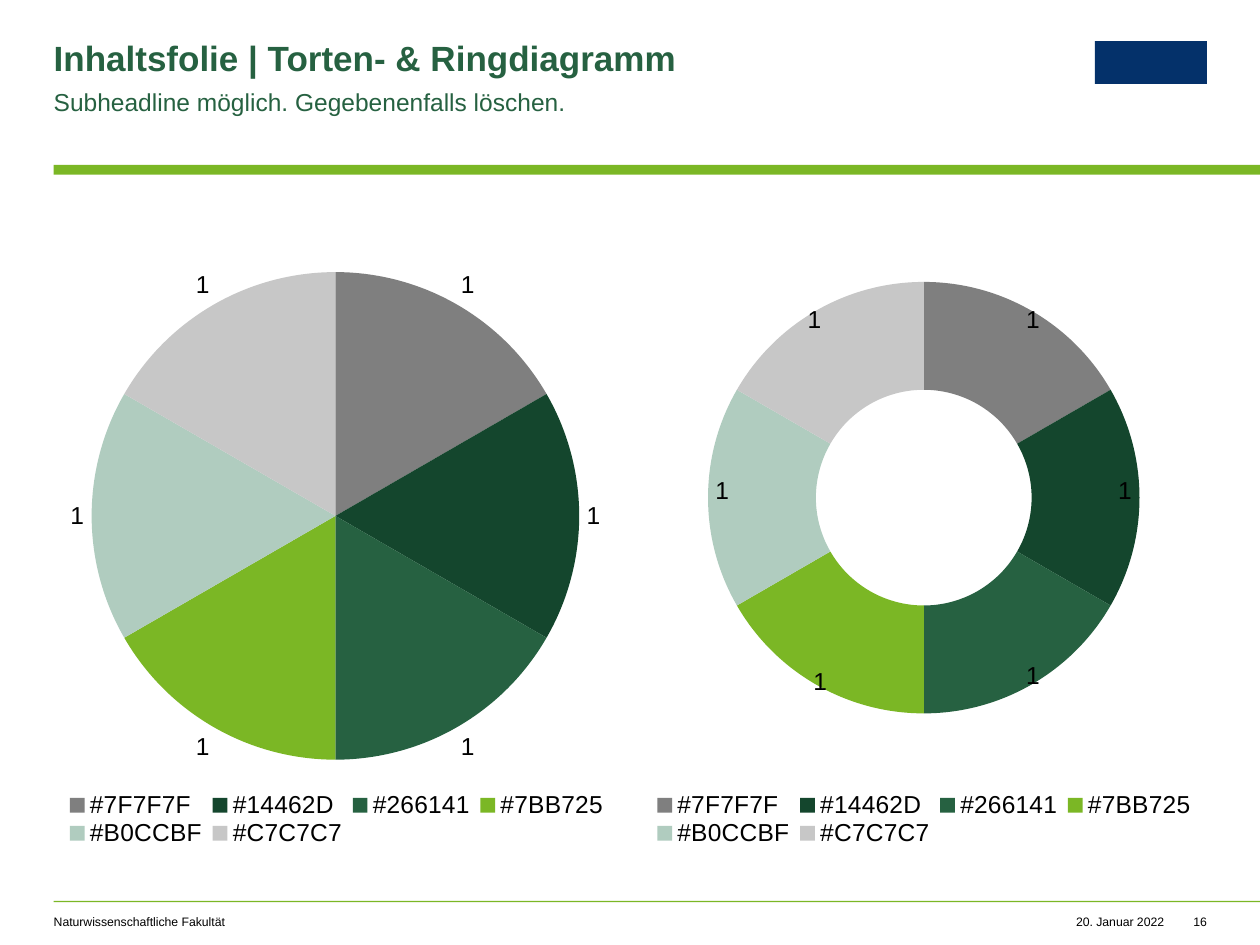
from lxml import etree
from pptx import Presentation
from pptx.chart.data import CategoryChartData
from pptx.dml.color import RGBColor
from pptx.enum.chart import XL_CHART_TYPE as CT, XL_LABEL_POSITION as LP
from pptx.enum.chart import XL_LEGEND_POSITION as LEGEND
from pptx.enum.shapes import MSO_SHAPE
from pptx.enum.text import PP_ALIGN as AL
from pptx.oxml.ns import qn
from pptx.util import Pt

COLORS = {"green": "7BB725", "dark": "266141", "navy": "04316A", "text": "000000"}
SLICES = ["7F7F7F", "14462D", "266141", "7BB725", "B0CCBF", "C7C7C7"]
FONT = "Arial"
WIDTH, HEIGHT = 720, 540
LEFT, RIGHT = 30.7, 689.7
# Label shifts that move the ring's values towards its outer edge
RING_SHIFTS = [(0.05, -0.06), (0.07, -0.01), (0.05, 0.06),
               (-0.04, 0.07), (-0.07, -0.01), (-0.05, -0.06)]
# Manual layouts, as shares of the chart
EDGE = {"xMode": "edge", "yMode": "edge"}
PIE_PLOT = {"x": 0.067, "y": 0.076, "w": 0.862, "h": 0.775}
RING_PLOT = {"x": 0.118, "y": 0.092, "w": 0.763, "h": 0.685}
LEGEND_BOX = {"x": 0.01, "y": 0.9, "w": 0.98, "h": 0.09}


def set_font(font, size, color="text", bold=False):
    font.name, font.size, font.bold = FONT, Pt(size), bold
    font.color.rgb = RGBColor.from_string(COLORS[color])


def add_rect(slide, x, y, w, h, color):
    sp = slide.shapes.add_shape(MSO_SHAPE.RECTANGLE, Pt(x), Pt(y), Pt(w), Pt(h))
    sp.shadow.inherit = False
    sp.fill.solid()
    sp.fill.fore_color.rgb = RGBColor.from_string(COLORS[color])
    sp.line.fill.background()


def add_text(slide, x, y, w, h, text, size, color="text", bold=False,
             align=AL.LEFT, spacing=1.0, wrap=True):
    tf = slide.shapes.add_textbox(Pt(x), Pt(y), Pt(w), Pt(h)).text_frame
    tf.margin_left = tf.margin_right = tf.margin_top = tf.margin_bottom = 0
    tf.word_wrap = wrap
    p = tf.paragraphs[0]
    p.text, p.alignment, p.line_spacing = text, align, spacing
    set_font(p.font, size, color, bold)


def add_layout(parent, index, values):
    """Give a chart part a manual layout."""
    for old in parent.findall(qn("c:layout")):
        parent.remove(old)
    layout = etree.Element(qn("c:layout"))
    manual = etree.SubElement(layout, qn("c:manualLayout"))
    for name, value in values.items():
        etree.SubElement(manual, qn(f"c:{name}")).set("val", str(value))
    parent.insert(index, layout)


def add_header(slide, x, y, right):
    add_text(slide, x, y, 404, 21.6, "Inhaltsfolie | Torten- & Ringdiagramm",
             20, "dark", bold=True, spacing=0.9)
    add_text(slide, x, y + 24.4, 404, 17, "Subheadline möglich. Gegebenenfalls löschen.",
             14, "dark", spacing=1.1)
    add_rect(slide, right - 64, y, 64, 24.5, "navy")  # logo placeholder
    add_rect(slide, x, y + 70.8, WIDTH - x, 5.5, "green")


def add_footer(slide, x, y, right):
    add_rect(slide, x, y, WIDTH - x, 0.8, "green")
    top = y + 7.7
    add_text(slide, x, top, 323, 8.6, "Naturwissenschaftliche Fakultät", 7)
    for text, end, w in [("20. Januar 2022", right - 24.5, 51), ("16", right, 12)]:
        add_text(slide, end - w, top, w, 8.6, text, 7, align=AL.RIGHT, wrap=False)


def add_share_chart(slide, kind, plot_box, x, y, w, h):
    data = CategoryChartData(number_format="General")
    data.categories = [f"#{color}" for color in SLICES]
    data.add_series("Series 1", [1] * len(SLICES))
    chart = slide.shapes.add_chart(kind, Pt(x), Pt(y), Pt(w), Pt(h), data).chart
    chart.has_title = False
    set_font(chart.font, 10)

    # Legend
    chart.has_legend = True
    chart.legend.position = LEGEND.BOTTOM
    chart.legend.include_in_layout = False
    set_font(chart.legend.font, 14)

    # Places of plot and legend
    space = chart._chartSpace
    add_layout(space.find(".//" + qn("c:plotArea")), 0,
               {"layoutTarget": "inner", **EDGE, **plot_box})
    add_layout(space.find(".//" + qn("c:legend")), 1, {**EDGE, **LEGEND_BOX})

    # Slices and values
    plot = chart.plots[0]
    plot.vary_by_categories = True
    series = plot.series[0]
    for i, color in enumerate(SLICES):
        fmt = series.points[i].format
        fmt.fill.solid()
        fmt.fill.fore_color.rgb = RGBColor.from_string(color)
        fmt.line.fill.background()
    labels = series.data_labels
    labels.show_value = True
    set_font(labels.font, 14)
    return chart


def add_pie(slide, *box):
    chart = add_share_chart(slide, CT.PIE, PIE_PLOT, *box)
    chart.plots[0].series[0].data_labels.position = LP.OUTSIDE_END


def add_ring(slide, *box):
    chart = add_share_chart(slide, CT.DOUGHNUT, RING_PLOT, *box)
    series = chart.plots[0].series[0]
    for i in range(len(RING_SHIFTS)):
        set_font(series.points[i].data_label.font, 14)
    for label, (dx, dy) in zip(series._element.iter(qn("c:dLbl")), RING_SHIFTS):
        add_layout(label, 1, {"x": dx, "y": dy})
    chart._chartSpace.find(".//" + qn("c:holeSize")).set("val", "80")


def main():
    prs = Presentation()
    prs.slide_width, prs.slide_height = Pt(WIDTH), Pt(HEIGHT)
    slide = prs.slides.add_slide(prs.slide_layouts[6])
    add_header(slide, LEFT, 23.5, RIGHT)
    add_footer(slide, LEFT, 514.8, RIGHT)

    # Two equal columns
    gap = 12.4
    col = (RIGHT - LEFT - gap) / 2
    for i, add_chart in enumerate([add_pie, add_ring]):
        add_chart(slide, LEFT + i * (col + gap), 128, col, 360)
    prs.save("out.pptx")


if __name__ == "__main__":
    main()
